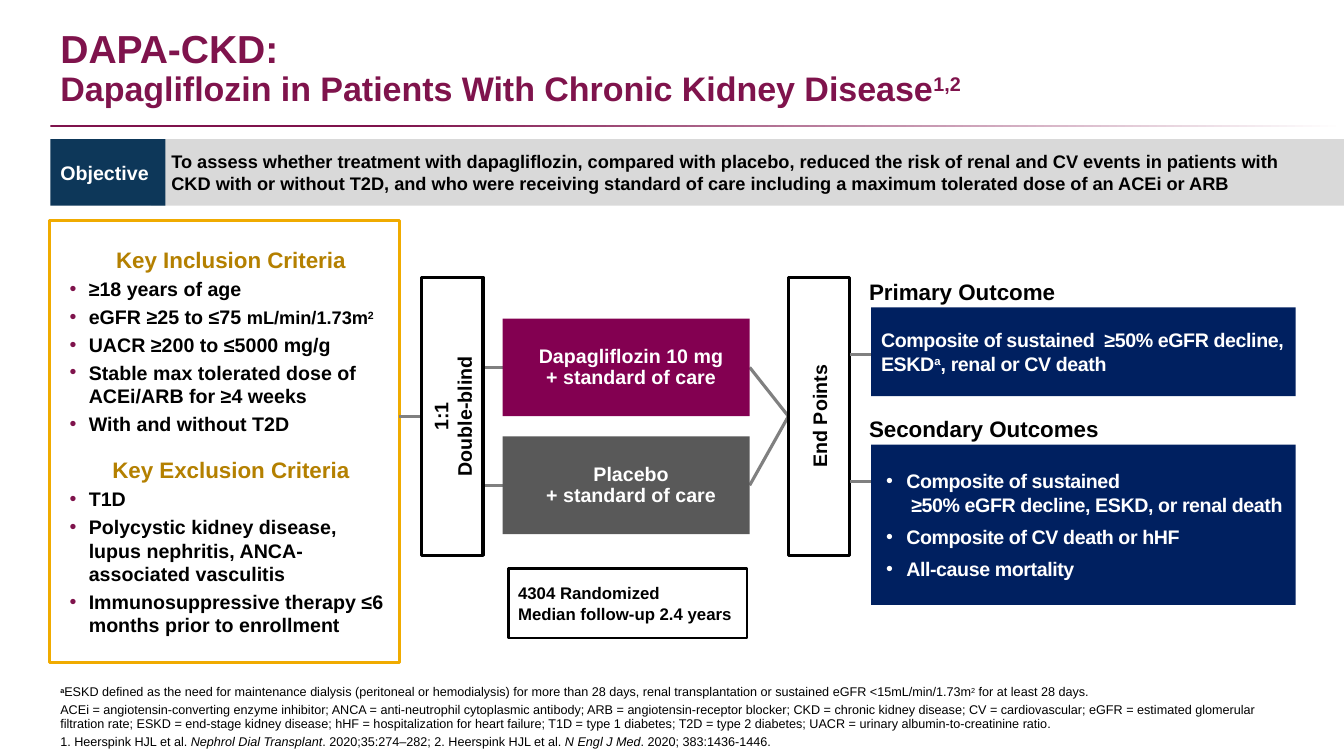
from collections import namedtuple
from copy import deepcopy

from lxml.etree import SubElement
from pptx import Presentation
from pptx.dml.color import RGBColor
from pptx.enum.shapes import MSO_CONNECTOR as Connector, MSO_SHAPE as Shape
from pptx.enum.text import MSO_ANCHOR as Anchor, MSO_AUTO_SIZE as AutoSize, PP_ALIGN as Align
from pptx.oxml.ns import qn
from pptx.util import Inches, Pt

COLORS = {
    "plum": "7F134C", "magenta": "830051", "navy": "002060", "teal": "0D3759",
    "gold": "F0AB00", "ochre": "B48000", "slate": "595959", "link": "808080",
    "silver": "D9D9D9", "white": "FFFFFF", "black": "000000",
}
SLIDE_W, SLIDE_H = Inches(13.33), Inches(7.5)
SUP = {"sup": True}
ITALIC = {"italic": True}
OUTCOME_INSETS = (0.1, 0.05, 0, 0.05)

INCLUSION = [
    "≥18 years of age",
    [("eGFR ≥25 to ≤75 ", {}), ("mL/min/1.73m", {"size": 13}), ("2", {"size": 13, "sup": True})],
    "UACR ≥200 to ≤5000 mg/g",
    "Stable max tolerated dose of ACEi/ARB for ≥4 weeks",
    "With and without T2D",
]
EXCLUSION = [
    "T1D",
    "Polycystic kidney disease, lupus nephritis, ANCA-associated vasculitis",
    "Immunosuppressive therapy ≤6 months prior to enrollment",
]
FOOTNOTES = [
    [("a", {"sup": True, "bold": True}),
     ("ESKD defined as the need for maintenance dialysis (peritoneal or hemodialysis) for more than "
      "28 days, renal transplantation or sustained eGFR <15mL/min/1.73m", {}),
     ("2", SUP), (" for at least 28 days.", {})],
    "ACEi = angiotensin-converting enzyme inhibitor; ANCA = anti-neutrophil cytoplasmic antibody; "
    "ARB = angiotensin-receptor blocker; CKD = chronic kidney disease; CV = cardiovascular; "
    "eGFR = estimated glomerular filtration rate; ESKD = end-stage kidney disease; "
    "hHF = hospitalization for heart failure; T1D = type 1 diabetes; T2D = type 2 diabetes; "
    "UACR = urinary albumin-to-creatinine ratio.",
    [("1. Heerspink HJL et al. ", {}), ("Nephrol Dial Transplant", ITALIC),
     (". 2020;35:274–282; 2. Heerspink HJL et al. ", {}), ("N Engl J Med", ITALIC),
     (". 2020; 383:1436-1446.", {})],
]


class Box(namedtuple("Box", "left top width height")):
    """A rectangle in percent of the slide's width and height."""

    @property
    def right(self):
        return self.left + self.width

    @property
    def middle(self):
        return self.top + self.height / 2

    def lengths(self):
        return (across(self.left), down(self.top), across(self.width), down(self.height))


RULE = Box(3.75, 16.53, 96.25, 0.27)
TITLE = Box(3.75, 3.33, 92.5, 11.73)
OBJECTIVE = Box(3.75, 18.4, 8.55, 8.8)
STATEMENT = Box(11.25, 18.4, 88.75, 8.8)
CRITERIA = Box(3.68, 29.2, 26.03, 58.4)
ALLOCATION = Box(31.36, 36.67, 4.58, 36.8)
END_POINTS = ALLOCATION._replace(left=58.66)
TREATMENT = Box(37.4, 42.13, 18.38, 12.93)
PLACEBO = TREATMENT._replace(top=57.73)
FOLLOW_UP = Box(37.81, 75.2, 17.78, 9.2)
PRIMARY = Box(64.82, 40.67, 31.58, 11.73)
SECONDARY = Box(64.82, 58.8, 31.58, 21.2)
FOOTER = Box(3.75, 85.07, 91.97, 14.67)


def across(share):
    return round(SLIDE_W * share / 100)


def down(share):
    return round(SLIDE_H * share / 100)


def rgb(name):
    return RGBColor.from_string(COLORS[name])


def write(paragraph, content, size, color="black", bold=True, spacing=None,
          align=Align.LEFT, line=None, before=0, after=0):
    """Fill a paragraph from a string or a list of (text, style) pieces; \\v breaks a line."""
    pieces = [(content, {})] if isinstance(content, str) else content
    styles = []
    for index, (text, style) in enumerate(pieces):
        if index == 0:
            paragraph.text = text
        else:
            paragraph.add_run().text = text
        styles += [style] * (len(paragraph.runs) - len(styles))
    for run, style in zip(paragraph.runs, styles):
        font = run.font
        font.name, font.size = "Arial", Pt(style.get("size", size))
        font.bold, font.italic = style.get("bold", bold), style.get("italic", False)
        font.color.rgb = rgb(color)
        if style.get("sup"):
            run._r.rPr.set("baseline", "30000")
        if spacing:
            run._r.rPr.set("spc", str(spacing))
    for line_break in paragraph._p.findall(qn("a:br")):
        line_break.append(deepcopy(paragraph.runs[0]._r.rPr))
    paragraph.alignment, paragraph.line_spacing = align, line
    paragraph.space_before, paragraph.space_after = Pt(before), Pt(after)


def add_bullet(paragraph, color, margin, hang):
    props = paragraph._p.get_or_add_pPr()
    props.set("marL", str(Inches(margin)))
    props.set("indent", str(-Inches(hang)))
    SubElement(SubElement(props, qn("a:buClr")), qn("a:srgbClr")).set("val", COLORS[color])
    SubElement(props, qn("a:buFont")).set("typeface", "Arial")
    SubElement(props, qn("a:buChar")).set("char", "•")


def next_paragraph(frame):
    first = frame.paragraphs[0]
    return frame.add_paragraph() if first.runs else first


def set_frame(frame, anchor, insets=(0.1, 0.05, 0.1, 0.05), wrap=True):
    frame.word_wrap, frame.vertical_anchor, frame.auto_size = wrap, anchor, AutoSize.NONE
    frame.margin_left, frame.margin_top, frame.margin_right, frame.margin_bottom = map(Inches, insets)
    return frame


def add_panel(slide, box, fill, outline=None, weight=2.25, **frame_options):
    panel = slide.shapes.add_shape(Shape.RECTANGLE, *box.lengths())
    panel.shadow.inherit = False
    panel.fill.solid()
    panel.fill.fore_color.rgb = rgb(fill)
    if outline:
        panel.line.color.rgb, panel.line.width = rgb(outline), Pt(weight)
    else:
        panel.line.fill.background()
    return set_frame(panel.text_frame, Anchor.MIDDLE, **frame_options)


def add_label(slide, box, anchor=Anchor.TOP):
    return set_frame(slide.shapes.add_textbox(*box.lengths()).text_frame, anchor)


def add_link(slide, x1, y1, x2, y2):
    link = slide.shapes.add_connector(Connector.STRAIGHT, across(x1), down(y1), across(x2), down(y2))
    link.line.color.rgb, link.line.width = rgb("link"), Pt(2.25)
    SubElement(link._element.spPr, qn("a:effectLst"))


def add_header(slide):
    rule = slide.shapes.add_shape(Shape.RECTANGLE, *RULE.lengths())
    rule.shadow.inherit = False
    rule.line.fill.background()
    rule.fill.gradient()
    rule.fill.gradient_angle = 0
    for stop, color, position in zip(rule.fill.gradient_stops, ("plum", "white"), (0.26, 1)):
        stop.color.rgb, stop.position = rgb(color), position

    title = slide.shapes.title
    title.left, title.top, title.width, title.height = TITLE.lengths()
    heading = set_frame(title.text_frame, Anchor.BOTTOM).paragraphs[0]
    write(heading, [("DAPA-CKD:\vDapagliflozin in Patients With Chronic Kidney Disease", {"size": 24.3}),
                    ("1,2", {"size": 24.3, "sup": True})], 24.3, "plum", line=0.9)
    heading.runs[0].font.size = Pt(27.9)


def add_objective(slide):
    statement = add_panel(slide, STATEMENT, "silver", insets=(0.2, 0.05, 0, 0.05))
    write(statement.paragraphs[0],
          "To assess whether treatment with dapagliflozin, compared with placebo, reduced the risk of "
          "renal and CV events in patients with \vCKD with or without T2D, and who were receiving "
          "standard of care including a maximum tolerated dose of an ACEi or ARB", 13)
    write(add_panel(slide, OBJECTIVE, "teal", wrap=False).paragraphs[0], "Objective", 14, "white")


def add_criteria(slide):
    frame = add_panel(slide, CRITERIA, "white", "gold", insets=(0.2, 0.04, 0.07, 0.04))
    groups = [("Key Inclusion Criteria", INCLUSION, 0), ("Key Exclusion Criteria", EXCLUSION, 12)]
    for heading, items, gap in groups:
        write(next_paragraph(frame), heading, 16, "ochre", align=Align.CENTER, before=gap, after=3)
        for item in items:
            paragraph = next_paragraph(frame)
            write(paragraph, item, 14, after=3)
            add_bullet(paragraph, "plum", 0.19, 0.19)


def add_flow(slide):
    hub = ALLOCATION.middle
    add_link(slide, CRITERIA.right, hub, ALLOCATION.left, hub)
    for arm, name in ((TREATMENT, "Dapagliflozin 10 mg"), (PLACEBO, "Placebo")):
        add_link(slide, ALLOCATION.right, arm.middle, arm.left, arm.middle)
        add_link(slide, arm.right, arm.middle, END_POINTS.left, hub)
        frame = add_panel(slide, arm, "magenta" if arm is TREATMENT else "slate", insets=OUTCOME_INSETS)
        write(frame.paragraphs[0], name + "\v+ standard of care", 14, "white", align=Align.CENTER, line=0.9)
    for stage, lines in ((ALLOCATION, ["1:1", "Double-blind"]), (END_POINTS, ["End Points"])):
        frame = add_panel(slide, stage, "white", "black")
        frame._txBody.bodyPr.set("vert", "vert270")
        for text in lines:
            write(next_paragraph(frame), text, 14, align=Align.CENTER)
    frame = add_panel(slide, FOLLOW_UP, "white", "black", weight=2)
    for text in ("4304 Randomized", "Median follow-up 2.4 years"):
        write(next_paragraph(frame), text, 12)


def add_outcome(slide, box, heading, link_y, items, bulleted):
    add_link(slide, END_POINTS.right, link_y, box.left, link_y)
    label = Box(box.left - 0.9, box.top - 4.53, 20.5, 4.93)
    write(add_label(slide, label).paragraphs[0], heading, 16)
    frame = add_panel(slide, box, "navy", insets=OUTCOME_INSETS)
    for item in items:
        paragraph = next_paragraph(frame)
        write(paragraph, item, 14, "white", spacing=-30, before=6)
        if bulleted:
            add_bullet(paragraph, "white", 0.25, 0.2)


def main():
    deck = Presentation()
    deck.slide_width, deck.slide_height = SLIDE_W, SLIDE_H
    slide = deck.slides.add_slide(deck.slide_layouts[5])
    add_header(slide)
    add_objective(slide)
    add_criteria(slide)
    add_flow(slide)
    add_outcome(slide, PRIMARY, "Primary Outcome", 46.93,
                [[("Composite of sustained  ≥50% eGFR decline, ESKD", {}), ("a", SUP),
                  (", renal or CV death", {})]], bulleted=False)
    add_outcome(slide, SECONDARY, "Secondary Outcomes", 63.73,
                ["Composite of sustained\v ≥50% eGFR decline, ESKD, or renal death",
                 "Composite of CV death or hHF", "All-cause mortality"], bulleted=True)
    footer = add_label(slide, FOOTER, Anchor.BOTTOM)
    for note in FOOTNOTES:
        write(next_paragraph(footer), note, 9, bold=False, line=0.9, before=3)
    deck.save("out.pptx")


if __name__ == "__main__":
    main()
